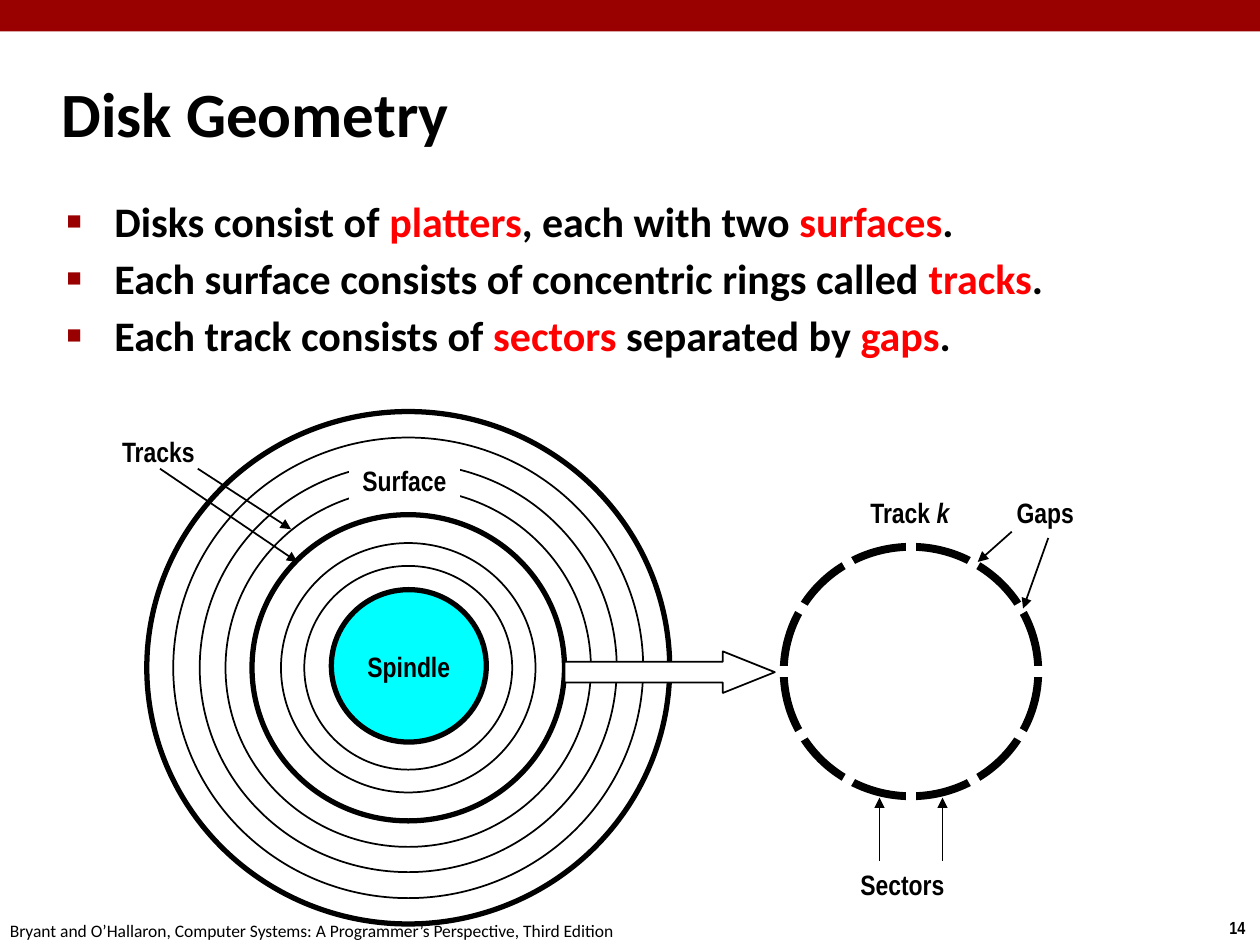
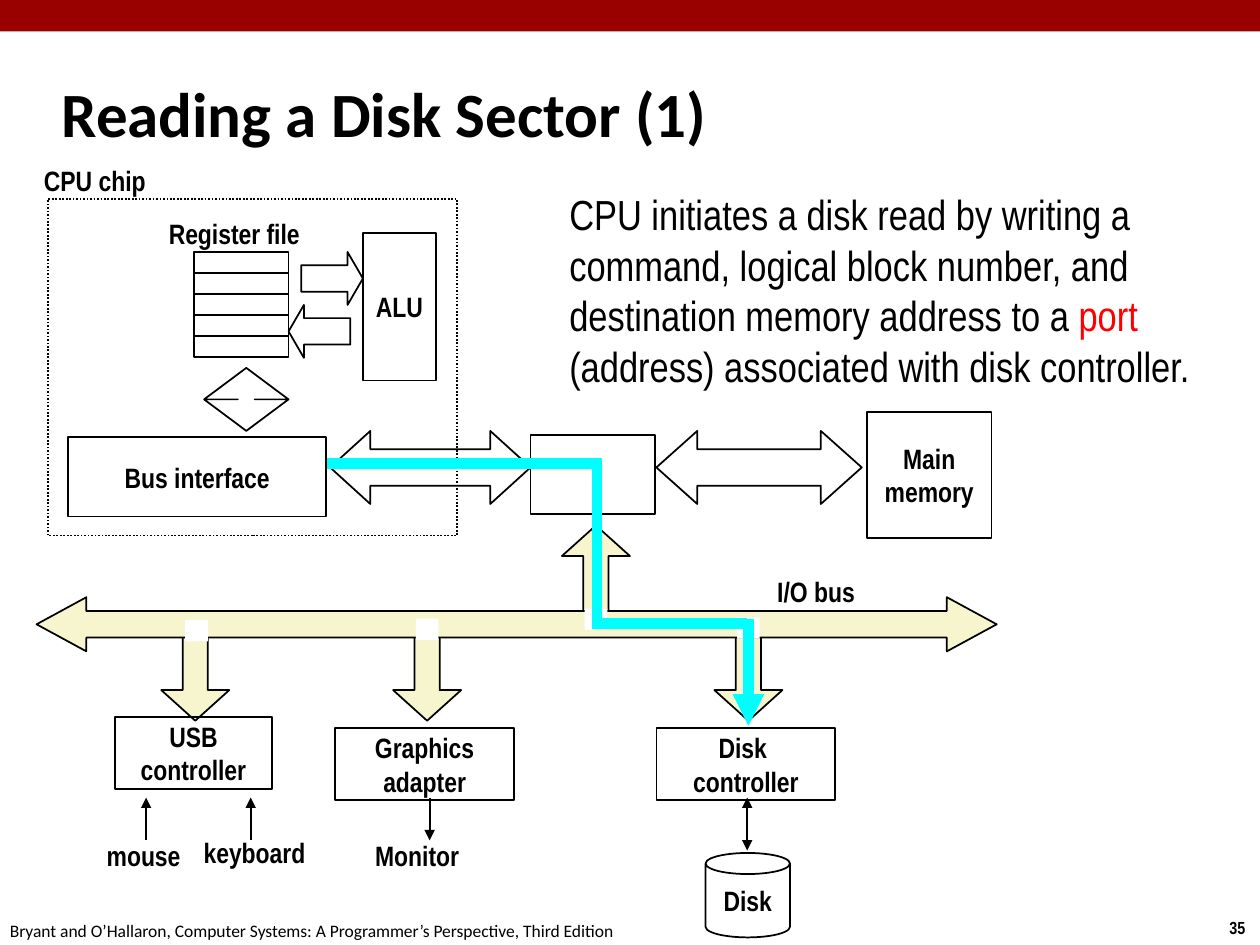
"""Build two lecture slides on disk geometry and disk reads."""
from dataclasses import dataclass
from math import cos, radians, sin
from typing import Any, NamedTuple, Optional

from lxml import etree
from pptx import Presentation
from pptx.dml.color import RGBColor
from pptx.enum.dml import MSO_LINE
from pptx.enum.shapes import MSO_CONNECTOR, MSO_SHAPE
from pptx.enum.text import MSO_ANCHOR, MSO_AUTO_SIZE, PP_ALIGN
from pptx.oxml.ns import qn
from pptx.util import Inches, Pt

RECT, OVAL, CAN = MSO_SHAPE.RECTANGLE, MSO_SHAPE.OVAL, MSO_SHAPE.CAN
RIGHT, LEFT = MSO_SHAPE.RIGHT_ARROW, MSO_SHAPE.LEFT_ARROW
UP, DOWN = MSO_SHAPE.UP_ARROW, MSO_SHAPE.DOWN_ARROW
ACROSS, UP_DOWN = MSO_SHAPE.LEFT_RIGHT_ARROW, MSO_SHAPE.UP_DOWN_ARROW
STRAIGHT, DOTTED = MSO_CONNECTOR.STRAIGHT, MSO_LINE.ROUND_DOT
TOP, MIDDLE = MSO_ANCHOR.TOP, MSO_ANCHOR.MIDDLE
ALIGN_LEFT, ALIGN_CENTER = PP_ALIGN.LEFT, PP_ALIGN.CENTER
FIT, NO_FIT = MSO_AUTO_SIZE.SHAPE_TO_FIT_TEXT, MSO_AUTO_SIZE.NONE


class Style(NamedTuple):
    """Typeface, size and weight of a kind of text."""
    name: str
    size: float
    bold: bool


@dataclass(frozen=True)
class Theme:
    """Colours and text styles of the deck."""
    band: str = "990000"
    ink: str = "000000"
    paper: str = "FFFFFF"
    accent: str = "FF0000"
    cyan: str = "00FFFF"
    bus: str = "F7F5CD"
    title: Style = Style("Calibri", 36, True)
    body: Style = Style("Calibri", 24, True)
    note: Style = Style("Arial Narrow", 24, False)
    label: Style = Style("Arial Narrow", 16, True)
    footer: Style = Style("Calibri", 10, False)
    number: Style = Style("Arial Narrow", 10, True)


T = Theme()
FOOTER = "Bryant and O’Hallaron, Computer Systems: A Programmer’s Perspective, Third Edition"


class Run(NamedTuple):
    """A stretch of text in one colour."""
    text: str
    color: str = T.ink
    italic: bool = False


Paragraphs = list[list[Run]]


@dataclass
class Box:
    """A preset shape with optional centred text."""
    x: float
    y: float
    w: float
    h: float
    kind: Any = RECT
    text: str = ""
    fill: Optional[str] = None
    line: Optional[str] = T.ink
    weight: float = 1
    adj: tuple[float, ...] = ()
    dash: Any = None


@dataclass
class Label:
    """A text box."""
    x: float
    y: float
    w: float
    h: float
    paragraphs: Paragraphs
    style: Style = T.label
    anchor: Any = MIDDLE
    align: Any = ALIGN_LEFT
    wrap: bool = False
    bullets: bool = False


@dataclass
class Line:
    """A straight line, with arrowheads at the named ends."""
    x1: float
    y1: float
    x2: float
    y2: float
    ends: tuple[str, ...] = ("tailEnd",)
    color: str = T.ink
    weight: float = 1


def rgb(color: str) -> RGBColor:
    """Turn a hex string into a colour."""
    return RGBColor.from_string(color)


def apply(target: Any, values: dict[str, Any]) -> None:
    """Set attributes from a dict."""
    for name, value in values.items():
        setattr(target, name, value)


def plain(text: str) -> Paragraphs:
    """Make one plain paragraph of each line."""
    return [[Run(line)] for line in text.split("\n")]


def add_bullet(p: Any) -> None:
    """Give a paragraph a square bullet with a hanging indent."""
    p.space_before = Pt(4)
    pPr = p._p.get_or_add_pPr()
    pPr.set("marL", str(Inches(0.38)))
    pPr.set("indent", str(-Inches(0.38)))
    clr = etree.SubElement(pPr, qn("a:buClr"))
    etree.SubElement(clr, qn("a:srgbClr"), val=T.band)
    etree.SubElement(pPr, qn("a:buSzPct"), val="60000")
    etree.SubElement(pPr, qn("a:buFont"), typeface="Arial")
    etree.SubElement(pPr, qn("a:buChar"), char="■")


def write(tf: Any, paragraphs: Paragraphs, style: Style, align: Any, bullets: bool = False) -> None:
    """Fill a text frame with styled paragraphs."""
    for i, runs in enumerate(paragraphs):
        p = tf.paragraphs[0] if i == 0 else tf.add_paragraph()
        p.alignment = align
        if bullets:
            add_bullet(p)
        for run in runs:
            r = p.add_run()
            r.text = run.text
            apply(r.font, {"name": style.name, "size": Pt(style.size),
                           "bold": style.bold, "italic": run.italic})
            r.font.color.rgb = rgb(run.color)


def draw_box(s: Any, box: Box) -> None:
    """Draw a preset shape."""
    sp = s.shapes.add_shape(box.kind, *map(Inches, (box.x, box.y, box.w, box.h)))
    sp.shadow.inherit = False
    for i, value in enumerate(box.adj):
        sp.adjustments[i] = value
    if box.fill:
        sp.fill.solid()
        sp.fill.fore_color.rgb = rgb(box.fill)
    else:
        sp.fill.background()
    if box.line:
        sp.line.color.rgb = rgb(box.line)
        sp.line.width = Pt(box.weight)
        if box.dash:
            sp.line.dash_style = box.dash
    else:
        sp.line.fill.background()
    if box.text:
        apply(sp.text_frame, {"word_wrap": False, "vertical_anchor": MIDDLE})
        write(sp.text_frame, plain(box.text), T.label, ALIGN_CENTER)


def draw_label(s: Any, label: Label) -> None:
    """Draw a text box."""
    sp = s.shapes.add_textbox(*map(Inches, (label.x, label.y, label.w, label.h)))
    apply(sp.text_frame, {"word_wrap": label.wrap, "vertical_anchor": label.anchor,
                          "auto_size": NO_FIT if label.wrap else FIT})
    write(sp.text_frame, label.paragraphs, label.style, label.align, label.bullets)


def draw_line(s: Any, line: Line) -> None:
    """Draw a straight connector."""
    sp = s.shapes.add_connector(STRAIGHT, *map(Inches, (line.x1, line.y1, line.x2, line.y2)))
    sp.line.color.rgb = rgb(line.color)
    sp.line.width = Pt(line.weight)
    for end in line.ends:
        etree.SubElement(sp.line._get_or_add_ln(), qn(f"a:{end}"), type="triangle")
    etree.SubElement(sp._element.spPr, qn("a:effectLst"))


DRAW = {Box: draw_box, Label: draw_label, Line: draw_line}


def draw(s: Any, *items: Any) -> None:
    """Draw items from back to front."""
    for item in items:
        DRAW[type(item)](s, item)


def add_slide(prs: Any, title: str, number: int) -> Any:
    """Add a slide with band, footer, number and title."""
    s = prs.slides.add_slide(prs.slide_layouts[6])
    draw(s, Box(0, 0, 10, 0.25, fill=T.band, line=None),
         Label(9.66, 7.23, 0.34, 0.27, plain(str(number)), T.number),
         Label(-0.02, 7.25, 5.08, 0.27, plain(FOOTER), T.footer),
         Label(0.39, 0.48, 8.3, 0.83, plain(title), T.title, wrap=True))
    return s


def ring(cx: float, cy: float, w: float, weight: float) -> Box:
    """Make a slightly flattened ring around a centre."""
    h = 0.98 * w
    return Box(cx - w / 2, cy - h / 2, w, h, OVAL, weight=weight)


def geometry_slide(prs: Any) -> None:
    """Show platters, tracks, sectors and gaps."""
    s = add_slide(prs, "Disk Geometry", 14)
    red = T.accent
    points = [
        [Run("Disks consist of "), Run("platters", red), Run(", each with two "),
         Run("surfaces", red), Run(".")],
        [Run("Each surface consists of concentric rings called "), Run("tracks", red), Run(".")],
        [Run("Each track consists of "), Run("sectors", red), Run(" separated by "),
         Run("gaps", red), Run(".")],
    ]
    draw(s, Label(0.43, 1.5, 8.64, 5.44, points, T.body, TOP, wrap=True, bullets=True))

    thick = (4.15, 2.48)
    for w in (4.15, 3.73, 3.31, 2.9, 2.48, 2.02, 1.65):
        draw(s, ring(3.24, 5.3, w, 3 if w in thick else 1))
    draw(s, Box(2.63, 4.68, 1.23, 1.21, OVAL, "Spindle", T.cyan, weight=3),
         Box(2.77, 3.63, 0.88, 0.37, text="Surface", fill=T.paper, line=None),
         Line(1.27, 3.72, 2.36, 4.46), Line(1.57, 3.72, 2.31, 4.2),
         Label(0.87, 3.4, 0.79, 0.37, plain("Tracks")))

    cx, cy, reach = 7.23, 5.33, 1.1
    draw(s, ring(cx, cy, 2.02, 4.5),
         Label(6.81, 3.88, 0.87, 0.37, [[Run("Track "), Run("k", italic=True)]]))
    for angle in range(0, 360, 30):
        a = radians(angle)
        draw(s, Line(cx, cy, cx + reach * cos(a), cy + reach * sin(a), (), T.paper, 6))
    draw(s, Label(6.73, 6.83, 0.88, 0.37, plain("Sectors")),
         *(Line(x, 6.83, x, 6.33) for x in (6.98, 7.48)),
         Box(4.48, 5.17, 1.67, 0.33, RIGHT, fill=T.paper, adj=(0.5, 1.25)),
         Label(7.97, 3.88, 0.66, 0.37, plain("Gaps")),
         Line(8.03, 4.22, 7.76, 4.46), Line(8.32, 4.27, 8.12, 4.83))


def sector_slide(prs: Any) -> None:
    """Show the path of a read command to the disk controller."""
    s = add_slide(prs, "Reading a Disk Sector (1)", 35)
    draw(s, Box(6.88, 3.27, 0.99, 1, text="Main\nmemory"),
         Box(5.21, 3.42, 1.63, 0.58, ACROSS, adj=(0.5, 0.56)),
         Box(4.21, 3.45, 0.99, 0.63),
         Box(2.62, 3.42, 1.59, 0.58, ACROSS, adj=(0.5, 0.55)))
    draw(s, *(Box(1.54, 2 + i / 6, 0.75, 1 / 6) for i in range(5)))
    draw(s, Box(2.39, 2, 0.49, 0.42, RIGHT, adj=(0.5, 0.29)),
         Box(2.29, 2.42, 0.49, 0.42, LEFT, adj=(0.5, 0.29)),
         Box(2.88, 1.85, 0.58, 1.17, text="ALU"),
         Label(1.23, 1.67, 1.26, 0.37, plain("Register file"), align=ALIGN_CENTER),
         Box(1.62, 2.92, 0.67, 0.5, UP_DOWN, adj=(0.5, 0.2)),
         Box(0.38, 1.58, 3.25, 2.67, dash=DOTTED),
         Label(0.25, 1.25, 1.19, 0.37, plain("CPU chip")))

    stem = (0.37, 0.45)
    draw(s, Box(4.46, 4.17, 0.54, 0.75, UP, fill=T.bus, adj=stem))
    draw(s, *(Box(x, 4.97, 0.54, 0.75, DOWN, fill=T.bus, adj=stem) for x in (5.67, 3.12, 1.28)))
    draw(s, Box(5.21, 5.78, 1.42, 0.57, text="Disk \ncontroller"),
         Box(2.66, 5.78, 1.42, 0.57, text="Graphics\nadapter"),
         Box(0.91, 5.69, 1.25, 0.57, text="USB\ncontroller"))

    draw(s, *(Line(x, 6.67, x, 6.33) for x in (1.16, 1.99)))
    draw(s, Line(3.41, 6.33, 3.41, 6.67),
         Line(5.93, 6.33, 5.93, 6.75, ("headEnd", "tailEnd")))
    for x, y, w, name in ((0.74, 6.6, 0.8, "mouse"), (1.51, 6.58, 1.02, "keyboard"),
                          (2.87, 6.6, 0.88, "Monitor")):
        draw(s, Label(x, y, w, 0.37, plain(name), align=ALIGN_CENTER))
    draw(s, Box(5.6, 6.77, 0.67, 0.67, CAN, "Disk", adj=(0.25,)),
         Box(0.29, 4.74, 7.62, 0.43, ACROSS, fill=T.bus, adj=(0.49, 0.92)))

    for x, y in ((1.47, 4.92), (3.3, 4.91), (5.85, 4.9), (4.64, 4.83)):
        draw(s, Box(x, y, 0.18, 0.17, fill=T.paper, line=None))
    draw(s, Label(6.07, 4.51, 0.96, 0.37, plain("I/O bus")))
    for x1, y1, x2, y2, ends in ((2.58, 3.68, 4.78, 3.68, ()), (4.74, 3.68, 4.74, 4.92, ()),
                                 (4.7, 4.95, 5.93, 4.95, ()), (5.94, 4.91, 5.94, 5.76, ("tailEnd",))):
        draw(s, Line(x1, y1, x2, y2, ends, T.cyan, 6))
    command = [[Run("CPU initiates a disk read by writing a command, logical block number, "
                    "and destination memory address to a "), Run("port ", T.accent),
                Run("(address) associated with disk controller.")]]
    draw(s, Box(0.54, 3.47, 2.05, 0.63, text="Bus interface"),
         Label(4.42, 1.45, 5.33, 1.72, command, T.note, TOP, wrap=True))


def main() -> None:
    """Build and save the deck."""
    prs = Presentation()
    apply(prs, {"slide_width": Inches(10), "slide_height": Inches(7.5)})
    geometry_slide(prs)
    sector_slide(prs)
    prs.save("out.pptx")


if __name__ == "__main__":
    main()
